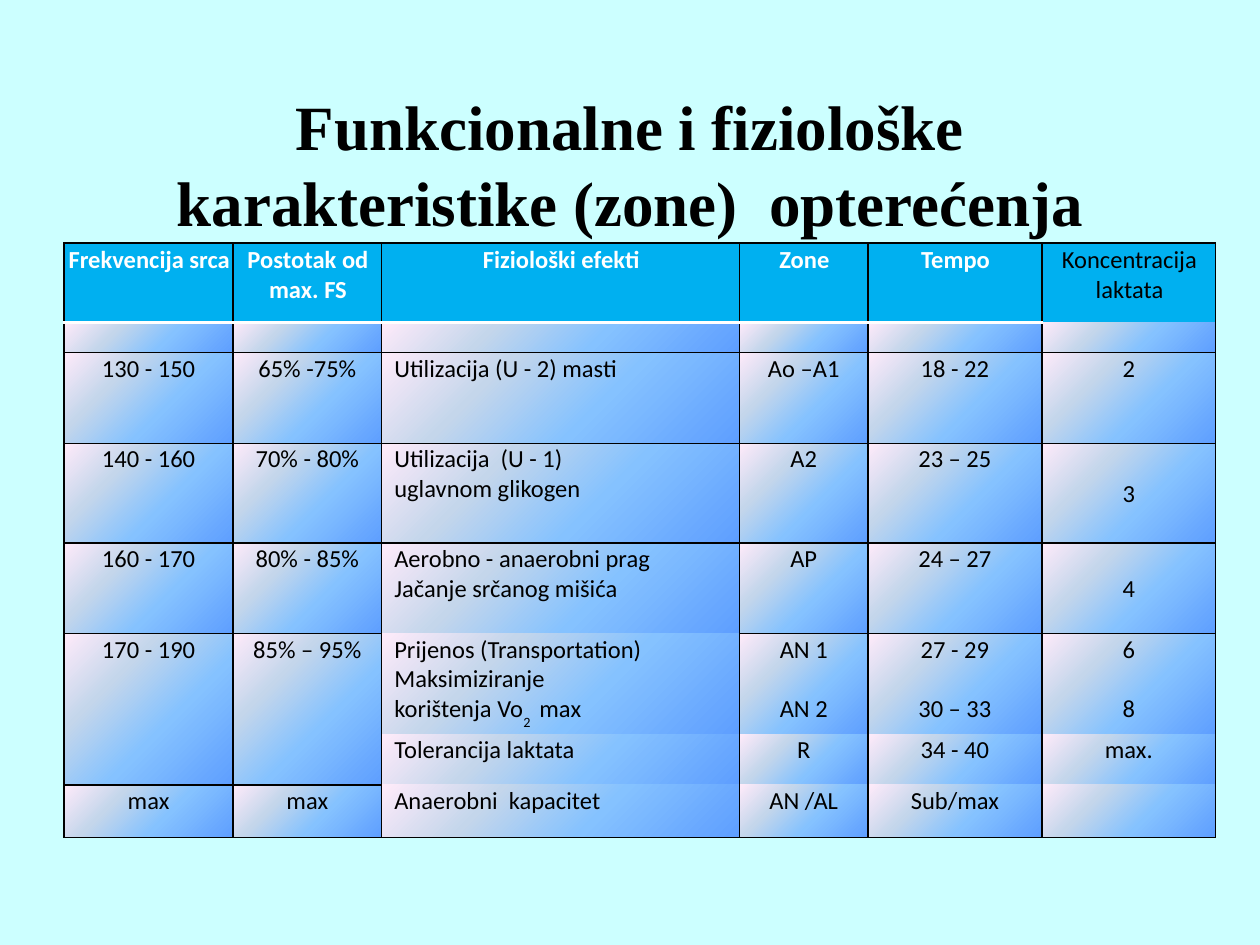
"""Build a slide with a table of physiological training load zones."""
from dataclasses import dataclass
from typing import Optional

from lxml.etree import SubElement
from pptx import Presentation
from pptx.dml.color import RGBColor
from pptx.enum.text import MSO_ANCHOR as Anchor, MSO_AUTO_SIZE as AutoSize, PP_ALIGN as Align
from pptx.oxml.ns import qn
from pptx.util import Inches, Pt

COLORS = {
    "background": "CCFFFF",
    "header": "00B0F0",
    "black": "000000",
    "white": "FFFFFF",
}
GRADIENT = {0: "5E9EFF", 40: "85C2FF", 70: "C4D6EB", 100: "FFEBFA"}
GRADIENT_ANGLE = 225
COLUMN_WIDTHS = (1.34, 1.18, 2.84, 1.02, 1.38, 1.38)
EFFECTS, LACTATE = 2, 5
SUBSCRIPT_MARK = "~"


@dataclass
class ZoneRow:
    """One table row with its height in inches."""
    height: float
    texts: tuple
    line_gap: float = 0
    lactate_anchor: Anchor = Anchor.TOP


ROWS = (
    ZoneRow(0.63, ("Frekvencija srca", "Postotak od max. FS", "Fiziološki efekti",
                   "Zone", "Tempo", "Koncentracija laktata")),
    ZoneRow(0.24, ("",) * 6),
    ZoneRow(0.72, ("130 - 150", "65% -75%", "Utilizacija (U - 2) masti",
                   "Ao –A1", "18 - 22", "2")),
    ZoneRow(0.79, ("140 - 160", "70% - 80%", "Utilizacija  (U - 1)\nuglavnom glikogen",
                   "A2", "23 – 25", "3"), lactate_anchor=Anchor.MIDDLE),
    ZoneRow(0.72, ("160 - 170", "80% - 85%",
                   "Aerobno - anaerobni prag\nJačanje srčanog mišića",
                   "AP", "24 – 27", "4"), lactate_anchor=Anchor.MIDDLE),
    ZoneRow(0.8, ("170 - 190", "85% – 95%",
                  "Prijenos (Transportation)\nMaksimiziranje\nkorištenja Vo~2 ~ max",
                  "AN 1\nAN 2", "27 - 29\n30 – 33", "6\n8"), line_gap=17),
    ZoneRow(0.4, ("", "", "Tolerancija laktata", "R", "34 - 40", "max.")),
    ZoneRow(0.42, ("max", "max", "Anaerobni  kapacitet", "AN /AL", "Sub/max", "")),
)


def format_object(target, values: dict) -> None:
    """Set every named attribute on the target."""
    for name, value in values.items():
        setattr(target, name, value)


def format_font(font, name: str, size: float, color: str, bold: bool) -> None:
    """Set the face, size, weight and colour of a font."""
    format_object(font, {"name": name, "size": Pt(size), "bold": bold})
    font.color.rgb = RGBColor.from_string(COLORS[color])


def add_solid(parent, color: str) -> None:
    """Append a solid fill to an XML element."""
    SubElement(SubElement(parent, qn("a:solidFill")), qn("a:srgbClr"), val=color)


def horizontal_line(boundary: int, column: int) -> Optional[tuple]:
    """Return colour and width of the rule above row number boundary."""
    if boundary == 1:
        return None if column == LACTATE else ("white", 1.5)
    hidden = (boundary == 5 and column == EFFECTS or boundary == 6
              or boundary == 7 and column >= EFFECTS)
    return None if hidden else ("black", 1)


def add_borders(properties, row: int, column: int) -> None:
    """Append the four borders of a cell."""
    borders = {
        "a:lnL": ("black", 1),
        "a:lnR": ("black", 1),
        "a:lnT": horizontal_line(row, column),
        "a:lnB": horizontal_line(row + 1, column),
    }
    for tag, border in borders.items():
        if border:
            color, width = border
            add_solid(SubElement(properties, qn(tag), w=str(Pt(width))), COLORS[color])
        else:
            SubElement(SubElement(properties, qn(tag), w="0"), qn("a:noFill"))


def add_gradient(properties) -> None:
    """Append the diagonal gradient fill of the body cells."""
    gradient = SubElement(properties, qn("a:gradFill"), rotWithShape="1")
    stops = SubElement(gradient, qn("a:gsLst"))
    for position, color in GRADIENT.items():
        stop = SubElement(stops, qn("a:gs"), pos=str(position * 1000))
        SubElement(stop, qn("a:srgbClr"), val=color)
    SubElement(gradient, qn("a:lin"), ang=str(GRADIENT_ANGLE * 60000), scaled="0")


def write_cell(cell, zone_row: ZoneRow, row: int, column: int) -> None:
    """Write the paragraphs of one cell, with marked parts as subscripts."""
    header = row == 0
    bold = header and column != LACTATE
    is_list = column == EFFECTS and not header
    edge = Inches(0.02 if header else 0.01)
    format_object(cell, {
        "margin_left": Inches(0.1) if is_list else edge,
        "margin_right": Inches(0.01),
        "margin_top": edge if zone_row.texts[column] else 0,
        "margin_bottom": 0,
        "vertical_anchor": zone_row.lactate_anchor if column == LACTATE else Anchor.TOP,
    })
    frame = cell.text_frame
    for index, line in enumerate(zone_row.texts[column].split("\n")):
        paragraph = frame.add_paragraph() if index else frame.paragraphs[0]
        paragraph.alignment = Align.LEFT if is_list else Align.CENTER
        if index and not is_list:
            paragraph.space_before = Pt(zone_row.line_gap)
        if not line:
            SubElement(paragraph._p, qn("a:endParaRPr"), sz="1400")
            continue
        for part, text in enumerate(line.split(SUBSCRIPT_MARK)):
            run = paragraph.add_run()
            run.text = text
            format_font(run.font, "Calibri", 14, "white" if bold else "black", bold)
            if part % 2:
                run._r.get_or_add_rPr().set("baseline", "-40000")


def add_title(slide) -> None:
    """Place and format the slide title."""
    title = slide.shapes.title
    format_object(title, {"left": Inches(0.75), "top": Inches(0.67),
                          "width": Inches(8.5), "height": Inches(1.25)})
    frame = title.text_frame
    frame.text = "Funkcionalne i fiziološke karakteristike (zone)  opterećenja"
    format_object(frame, {"word_wrap": True, "auto_size": AutoSize.NONE,
                          "vertical_anchor": Anchor.MIDDLE})
    paragraph = frame.paragraphs[0]
    paragraph.alignment = Align.CENTER
    format_font(paragraph.runs[0].font, "Times New Roman", 36, "black", True)


def add_zone_table(slide) -> None:
    """Add the table of load zones."""
    table = slide.shapes.add_table(
        len(ROWS), len(COLUMN_WIDTHS), Inches(0.51), Inches(1.93),
        Inches(sum(COLUMN_WIDTHS)), Inches(sum(row.height for row in ROWS))).table
    format_object(table, {"first_row": False, "horz_banding": False})
    for column, width in zip(table.columns, COLUMN_WIDTHS):
        column.width = Inches(width)
    for row, zone_row in enumerate(ROWS):
        table.rows[row].height = Inches(zone_row.height)
        for column in range(len(COLUMN_WIDTHS)):
            cell = table.cell(row, column)
            write_cell(cell, zone_row, row, column)
            properties = cell._tc.get_or_add_tcPr()
            add_borders(properties, row, column)
            if row == 0:
                add_solid(properties, COLORS["header"])
            else:
                add_gradient(properties)
    for column in range(EFFECTS):
        table.cell(5, column).merge(table.cell(6, column))


def main() -> None:
    """Build and save the presentation."""
    presentation = Presentation()
    format_object(presentation, {"slide_width": Inches(10), "slide_height": Inches(7.5)})
    slide = presentation.slides.add_slide(presentation.slide_layouts[5])
    fill = slide.background.fill
    fill.solid()
    fill.fore_color.rgb = RGBColor.from_string(COLORS["background"])
    add_title(slide)
    add_zone_table(slide)
    presentation.save("out.pptx")


if __name__ == "__main__":
    main()
